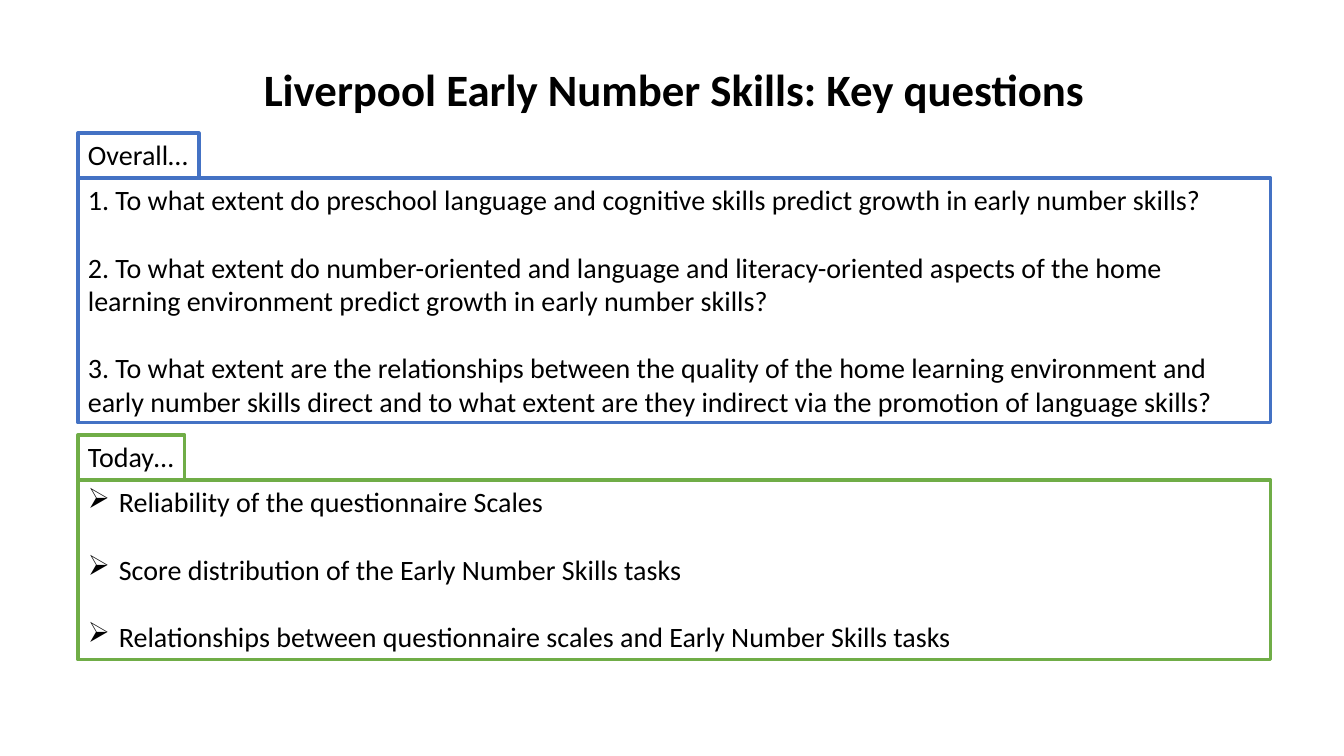
import pptx
import pptx.util
import pptx.dml.color
import pptx.enum.shapes
import pptx.enum.text
import lxml.etree
import pptx.oxml.ns

SCALE = 914400 / 100.8
FONT = "Calibri"
BLACK = pptx.dml.color.RGBColor(0x00, 0x00, 0x00)
BLUE = pptx.dml.color.RGBColor(0x44, 0x72, 0xC4)
GREEN = pptx.dml.color.RGBColor(0x70, 0xAD, 0x47)

TITLE = "Liverpool Early Number Skills: Key questions"
OVERALL = [
    "1. To what extent do preschool language and cognitive skills predict growth in early number skills?",
    "2. To what extent do number-oriented and language and literacy-oriented aspects of the home "
    "learning environment predict growth in early number skills?",
    "3. To what extent are the relationships between the quality of the home learning environment and "
    "early number skills direct and to what extent are they indirect via the promotion of language skills?",
]
TODAY = [
    "Reliability of the questionnaire Scales",
    "Score distribution of the Early Number Skills tasks",
    "Relationships between questionnaire scales and Early Number Skills tasks",
]

LEFT, WIDTH = 78, 1193
TAB = 45  # height of a label tab


def px(n):
    return pptx.util.Emu(round(n * SCALE))


def style(par, size, bold=False):
    for run in par.runs:
        run.font.name = FONT
        run.font.size = pptx.util.Pt(size)
        run.font.bold = bold
        run.font.color.rgb = BLACK


def bullet(par):
    props = par._p.get_or_add_pPr()
    props.set("marL", str(px(31)))
    props.set("indent", str(-px(31)))
    mark = lxml.etree.SubElement(props, pptx.oxml.ns.qn("a:buChar"))
    mark.set("char", "➢")


def frame(slide, x, y, w, h, color, lines, marked=False, wrap=True):
    """Outlined box with left-aligned paragraphs."""
    box = slide.shapes.add_shape(
        pptx.enum.shapes.MSO_SHAPE.RECTANGLE, px(x), px(y), px(w), px(h))
    box.shadow.inherit = False
    box.fill.background()
    box.line.color.rgb = color
    box.line.width = pptx.util.Pt(2.25)
    text = box.text_frame
    text.word_wrap = wrap
    text.vertical_anchor = pptx.enum.text.MSO_ANCHOR.TOP
    text.text = "\n".join(lines)
    for i, par in enumerate(text.paragraphs):
        par.alignment = pptx.enum.text.PP_ALIGN.LEFT
        if i:
            par.space_before = pptx.util.Pt(24)
        if marked:
            bullet(par)
        style(par, 20)


def panel(slide, x, y, w, h, color, label, span, lines, marked=False):
    """Label tab sitting on top of a full-width box."""
    frame(slide, x, y + TAB, w, h - TAB, color, lines, marked)
    frame(slide, x, y, span, TAB, color, [label], wrap=False)


def heading(slide, x, y, w, h):
    title = slide.shapes.title
    title.left, title.top, title.width, title.height = px(x), px(y), px(w), px(h)
    text = title.text_frame
    text.text = TITLE
    text.auto_size = pptx.enum.text.MSO_AUTO_SIZE.NONE
    text.vertical_anchor = pptx.enum.text.MSO_ANCHOR.MIDDLE
    par = text.paragraphs[0]
    par.alignment = pptx.enum.text.PP_ALIGN.CENTER
    par.line_spacing = 0.9
    style(par, 32, bold=True)


def main():
    deck = pptx.Presentation()
    deck.slide_width, deck.slide_height = px(1344), px(756)
    slide = deck.slides.add_slide(deck.slide_layouts[5])
    heading(slide, LEFT, 63, WIDTH, 57)
    panel(slide, LEFT, 133, WIDTH, 290, BLUE, "Overall…", 121, OVERALL)
    panel(slide, LEFT, 435, WIDTH, 225, GREEN, "Today…", 107, TODAY, marked=True)
    deck.save("out.pptx")


if __name__ == "__main__":
    main()
